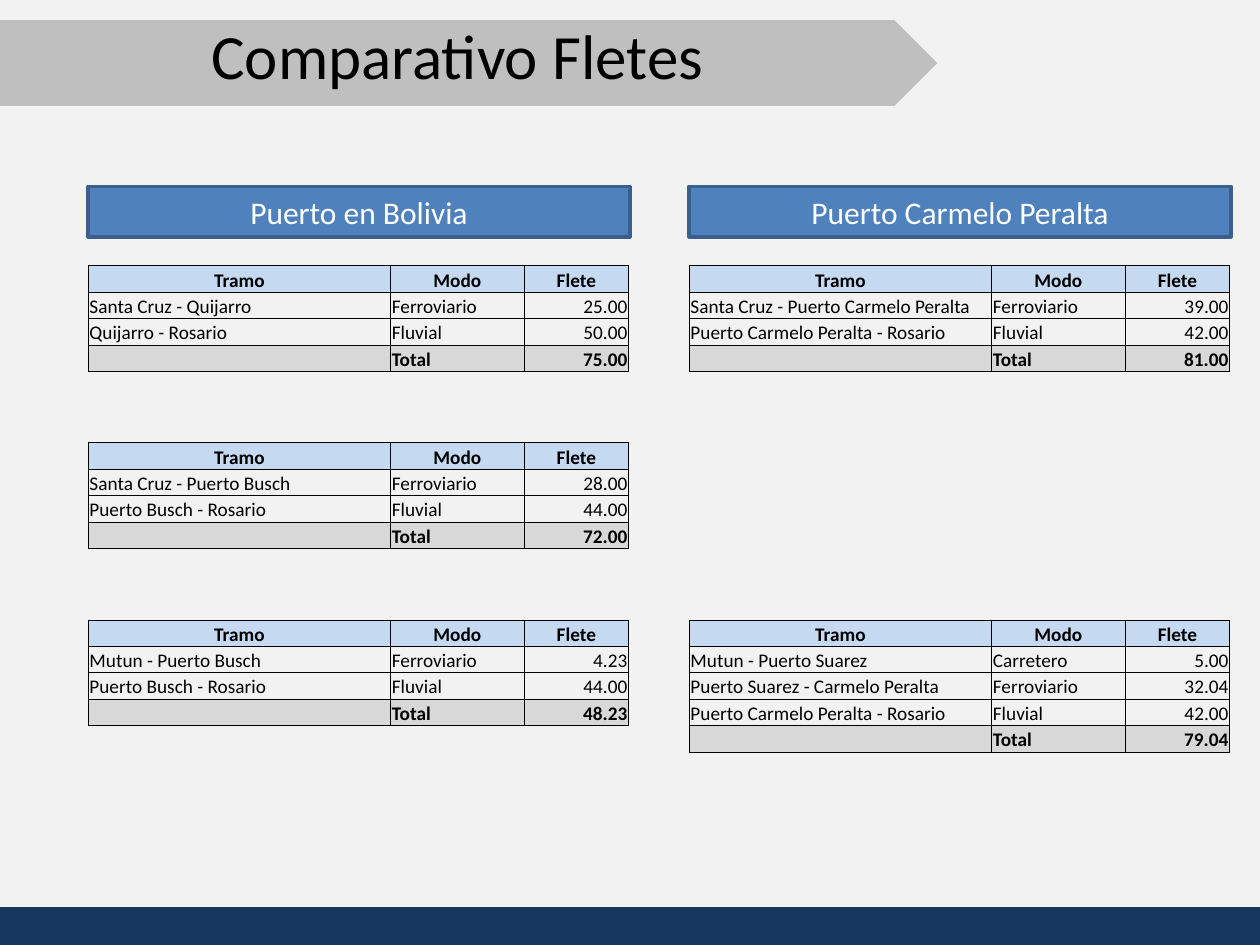
from dataclasses import dataclass

from lxml import etree
from pptx import Presentation
from pptx.dml.color import RGBColor
from pptx.enum import shapes, text
from pptx.oxml import ns
from pptx.util import Inches, Pt


@dataclass(frozen=True)
class Theme:
    font: str = "Calibri"
    background: str = "F2F2F2"
    banner: str = "BFBFBF"
    footer: str = "17375E"
    port: str = "4F81BD"
    port_line: str = "3A5F8C"
    header: str = "C5D9F1"
    total: str = "D8D8D8"
    ink: str = "000000"
    light: str = "FFFFFF"
    title_size: int = 36
    port_size: int = 18
    cell_size: int = 11
    port_line_width: float = 2
    border_width: float = 0.5


THEME = Theme()
ALIGN = text.PP_ALIGN
COLUMN_LEFTS = (0.7, 5.47)
TABLE_TOP, TABLE_STEP = 2.11, 1.405
ROW_HEIGHT = 0.21
COLUMN_WIDTHS = (2.4, 1.06, 0.83)
HEADINGS = ("Tramo", "Modo", "Flete")
ALIGNMENTS = (ALIGN.LEFT, ALIGN.LEFT, ALIGN.RIGHT)

PORTS = ("Puerto en Bolivia", "Puerto Carmelo Peralta")
ROUTES = (
    (0, 0, (("Santa Cruz - Quijarro", "Ferroviario", "25.00"),
            ("Quijarro - Rosario", "Fluvial", "50.00")), "75.00"),
    (0, 1, (("Santa Cruz - Puerto Busch", "Ferroviario", "28.00"),
            ("Puerto Busch - Rosario", "Fluvial", "44.00")), "72.00"),
    (1, 0, (("Santa Cruz - Puerto Carmelo Peralta", "Ferroviario", "39.00"),
            ("Puerto Carmelo Peralta - Rosario", "Fluvial", "42.00")), "81.00"),
    (1, 2, (("Mutun - Puerto Suarez", "Carretero", "5.00"),
            ("Puerto Suarez - Carmelo Peralta", "Ferroviario", "32.04"),
            ("Puerto Carmelo Peralta - Rosario", "Fluvial", "42.00")), "79.04"),
    (0, 2, (("Mutun - Puerto Busch", "Ferroviario", "4.23"),
            ("Puerto Busch - Rosario", "Fluvial", "44.00")), "48.23"),
)


def write(frame, words, size, color, align, bold=False):
    para = frame.paragraphs[0]
    para.text = words
    para.alignment = align
    para.font.name = THEME.font
    para.font.size = Pt(size)
    para.font.bold = bold
    para.font.color.rgb = RGBColor.from_string(color)
    if not words:
        end = etree.SubElement(para._p, ns.qn("a:endParaRPr"))
        end.set("sz", str(size * 100))


def add_block(page, kind, left, top, width, height, fill, line=None):
    block = page.shapes.add_shape(
        kind, Inches(left), Inches(top), Inches(width), Inches(height))
    block.shadow.inherit = False
    block.fill.solid()
    block.fill.fore_color.rgb = RGBColor.from_string(fill)
    if line:
        block.line.color.rgb = RGBColor.from_string(line)
        block.line.width = Pt(THEME.port_line_width)
    else:
        block.line.fill.background()
    return block


def add_title(page, words):
    box = page.shapes.add_textbox(
        Inches(0.31), Inches(0.08), Inches(6.64), Inches(0.47))
    box.text_frame.word_wrap = True
    write(box.text_frame, words, THEME.title_size, THEME.ink, ALIGN.CENTER)


def add_port(page, left, words):
    block = add_block(page, shapes.MSO_SHAPE.RECTANGLE, left, 1.48, 4.3, 0.4,
                      THEME.port, THEME.port_line)
    frame = block.text_frame
    frame.word_wrap = True
    frame.vertical_anchor = text.MSO_ANCHOR.MIDDLE
    write(frame, words, THEME.port_size, THEME.light, ALIGN.CENTER)


def add_borders(cell):
    properties = cell._tc.get_or_add_tcPr()
    for side in ("lnL", "lnR", "lnT", "lnB"):
        border = etree.SubElement(properties, ns.qn(f"a:{side}"))
        border.set("w", str(Pt(THEME.border_width)))
        fill = etree.SubElement(border, ns.qn("a:solidFill"))
        etree.SubElement(fill, ns.qn("a:srgbClr")).set("val", THEME.ink)


def fill_cell(cell, words, align, bold, fill):
    cell.margin_left = cell.margin_right = cell.margin_top = Inches(0.01)
    cell.margin_bottom = 0
    cell.vertical_anchor = text.MSO_ANCHOR.BOTTOM
    add_borders(cell)
    if fill:
        cell.fill.solid()
        cell.fill.fore_color.rgb = RGBColor.from_string(fill)
    else:
        cell.fill.background()
    write(cell.text_frame, words, THEME.cell_size, THEME.ink, align, bold)


def add_route_table(page, left, top, legs, total):
    rows = [HEADINGS, *legs, ("", "Total", total)]
    table = page.shapes.add_table(
        len(rows), len(HEADINGS), Inches(left), Inches(top),
        Inches(sum(COLUMN_WIDTHS)), Inches(ROW_HEIGHT * len(rows))).table
    table.first_row = table.horz_banding = False
    for column, width in zip(table.columns, COLUMN_WIDTHS):
        column.width = Inches(width)
    fills = [THEME.header] + [None] * len(legs) + [THEME.total]
    for r, (row, fill) in enumerate(zip(rows, fills)):
        table.rows[r].height = Inches(ROW_HEIGHT)
        for c, words in enumerate(row):
            align = ALIGN.CENTER if r == 0 else ALIGNMENTS[c]
            fill_cell(table.cell(r, c), words, align, fill is not None, fill)


def main():
    deck = Presentation()
    deck.slide_width, deck.slide_height = Inches(10), Inches(7.5)
    page = deck.slides.add_slide(deck.slide_layouts[6])
    page.background.fill.solid()
    page.background.fill.fore_color.rgb = RGBColor.from_string(THEME.background)

    add_block(page, shapes.MSO_SHAPE.PENTAGON, 0, 0.16, 7.44, 0.68, THEME.banner)
    add_block(page, shapes.MSO_SHAPE.RECTANGLE, 0, 7.2, 10, 0.3, THEME.footer)
    add_title(page, "Comparativo Fletes")
    for column, level, legs, total in ROUTES:
        add_route_table(page, COLUMN_LEFTS[column],
                        TABLE_TOP + TABLE_STEP * level, legs, total)
    for left, port in zip(COLUMN_LEFTS, PORTS):
        add_port(page, left, port)
    deck.save("out.pptx")


if __name__ == "__main__":
    main()
